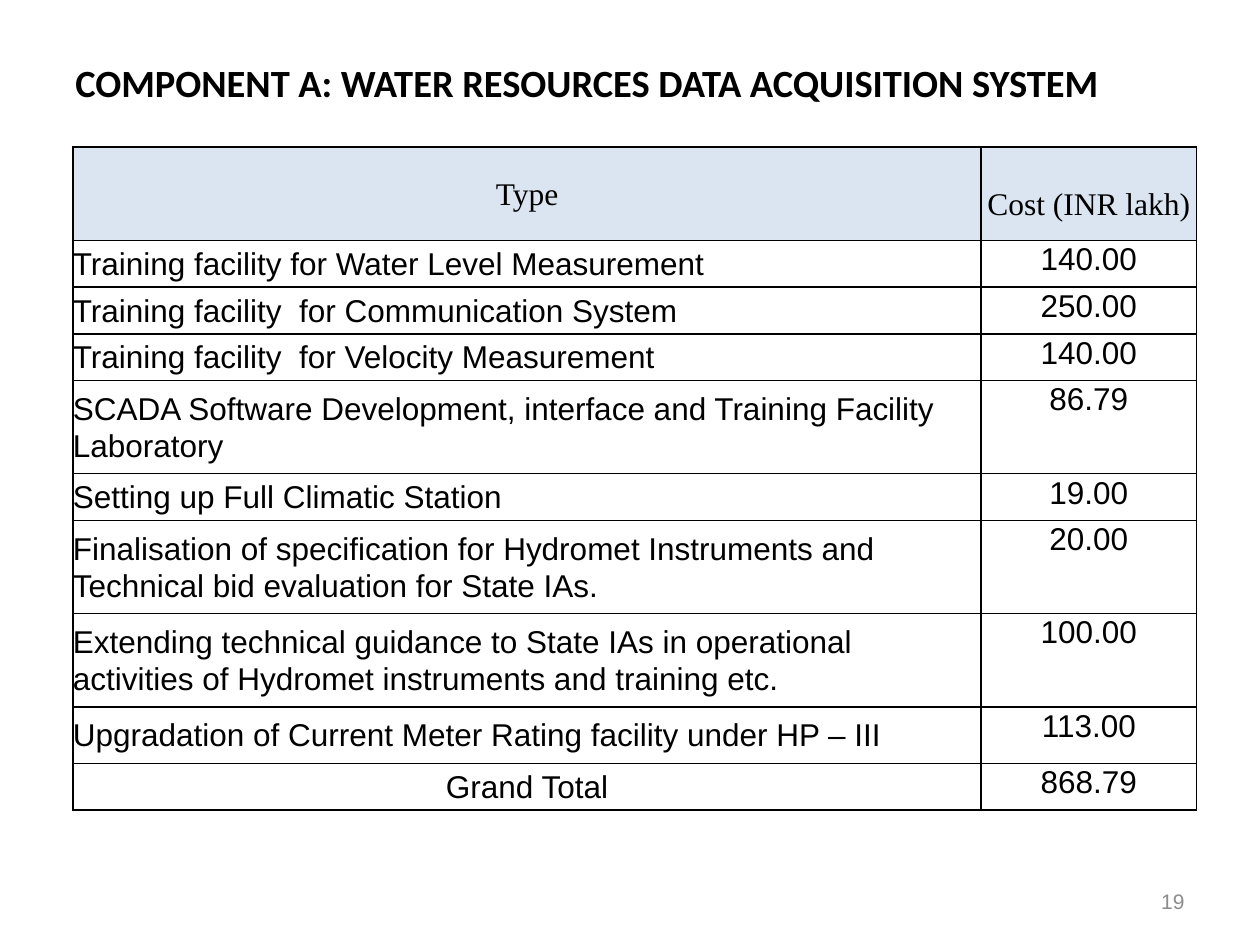
"""Build the slide on the costs of the water data acquisition component."""
from dataclasses import dataclass

from lxml import etree
from pptx import Presentation
from pptx import util as u
from pptx.dml.color import RGBColor
from pptx.enum import text as tx
from pptx.oxml import ns

TITLE = "COMPONENT A: WATER RESOURCES DATA ACQUISITION SYSTEM"
PAGE = "19"
HEAD = ("Type", "Cost (INR lakh)")
ITEMS = [
    ("Training facility for Water Level Measurement", "140.00"),
    ("Training facility  for Communication System", "250.00"),
    ("Training facility  for Velocity Measurement", "140.00"),
    ("SCADA Software Development, interface and Training Facility Laboratory", "86.79"),
    ("Setting up Full Climatic Station", "19.00"),
    ("Finalisation of specification for Hydromet Instruments and "
     "Technical bid evaluation for State IAs.", "20.00"),
    ("Extending technical guidance to State IAs in operational "
     "activities of Hydromet instruments and training etc.", "100.00"),
    ("Upgradation of Current Meter Rating facility under HP – III", "113.00"),
]
TOTAL = ("Grand Total", "868.79")
WIDTHS = (18.31, 4.34)
LOW, MID, HIGH = 0.94, 1.14, 1.88
HEIGHTS = (HIGH, LOW, LOW, LOW, HIGH, LOW, HIGH, HIGH, MID, LOW)


@dataclass(frozen=True)
class Theme:
    """Hold the colours, fonts and sizes."""
    ink: str = "000000"
    pale: str = "DBE5F1"
    white: str = "FFFFFF"
    grey: str = "8C8C8C"
    sans: str = "Arial"
    serif: str = "Times New Roman"
    title: str = "Calibri"
    big: int = 22
    body: int = 18
    small: int = 12


LOOK = Theme()
LEFT, MIDST, RIGHT = tx.PP_ALIGN.LEFT, tx.PP_ALIGN.CENTER, tx.PP_ALIGN.RIGHT


def write(frame, words, face, size, tint=LOOK.ink, align=LEFT, bold=False):
    """Put one styled paragraph into a text frame."""
    para = frame.paragraphs[0]
    para.text, para.alignment = words, align
    font = para.font
    font.name, font.size, font.bold = face, u.Pt(size), bold
    font.color.rgb = RGBColor.from_string(tint)
    return para


def add_box(slide, place):
    """Add a wrapped text box centred vertically."""
    frame = slide.shapes.add_textbox(*map(u.Cm, place)).text_frame
    frame.word_wrap = True
    frame.vertical_anchor = tx.MSO_ANCHOR.MIDDLE
    return frame


def rule(cell, top):
    """Draw the four borders of a cell."""
    props = cell._tc.get_or_add_tcPr()
    for side, width in (("L", 1), ("R", 1), ("T", top), ("B", 1)):
        line = etree.SubElement(props, ns.qn(f"a:ln{side}"), w=str(u.Pt(width)))
        fill = etree.SubElement(line, ns.qn("a:solidFill"))
        etree.SubElement(fill, ns.qn("a:srgbClr"), val=LOOK.ink)


def style(cell, words, row, col, last):
    """Fill one table cell according to its row and column."""
    head = row == 0
    rule(cell, 1.5 if head else 1)
    if head or col == 0:
        cell.fill.solid()
        cell.fill.fore_color.rgb = RGBColor.from_string(LOOK.pale if head else LOOK.white)
    else:
        cell.fill.background()
    cell.margin_left = cell.margin_right = cell.margin_bottom = 0
    cell.margin_top = u.Cm(0.77) if head and col else 0
    cell.vertical_anchor = tx.MSO_ANCHOR.TOP if col else tx.MSO_ANCHOR.MIDDLE
    para = write(cell.text_frame, words, LOOK.serif if head else LOOK.sans, LOOK.body,
                 align=MIDST if head or col or last else LEFT)
    para.line_spacing = 1.05


def add_costs(slide):
    """Add the cost table."""
    rows = [HEAD, *ITEMS, TOTAL]
    size = (1.47, 2.97, sum(WIDTHS), sum(HEIGHTS))
    grid = slide.shapes.add_table(len(rows), len(HEAD), *map(u.Cm, size)).table
    grid.first_row = grid.horz_banding = False
    for part, width in zip(grid.columns, WIDTHS):
        part.width = u.Cm(width)
    for part, height in zip(grid.rows, HEIGHTS):
        part.height = u.Cm(height)
    for row, pair in enumerate(rows):
        for col, words in enumerate(pair):
            style(grid.cell(row, col), words, row, col, pair is TOTAL)


def main():
    """Make the deck and save it."""
    deck = Presentation()
    deck.slide_width, deck.slide_height = u.Cm(25.4), u.Cm(19.05)
    slide = deck.slides.add_slide(deck.slide_layouts[6])
    frame = add_box(slide, (1.27, 0.76, 22.86, 2.62))
    frame.margin_bottom = u.Cm(0.97)
    write(frame, TITLE, LOOK.title, LOOK.big, bold=True)
    frame = add_box(slide, (18.2, 17.66, 5.93, 1.01))
    write(frame, PAGE, LOOK.sans, LOOK.small, LOOK.grey, RIGHT)
    add_costs(slide)
    deck.save("out.pptx")


if __name__ == "__main__":
    main()
